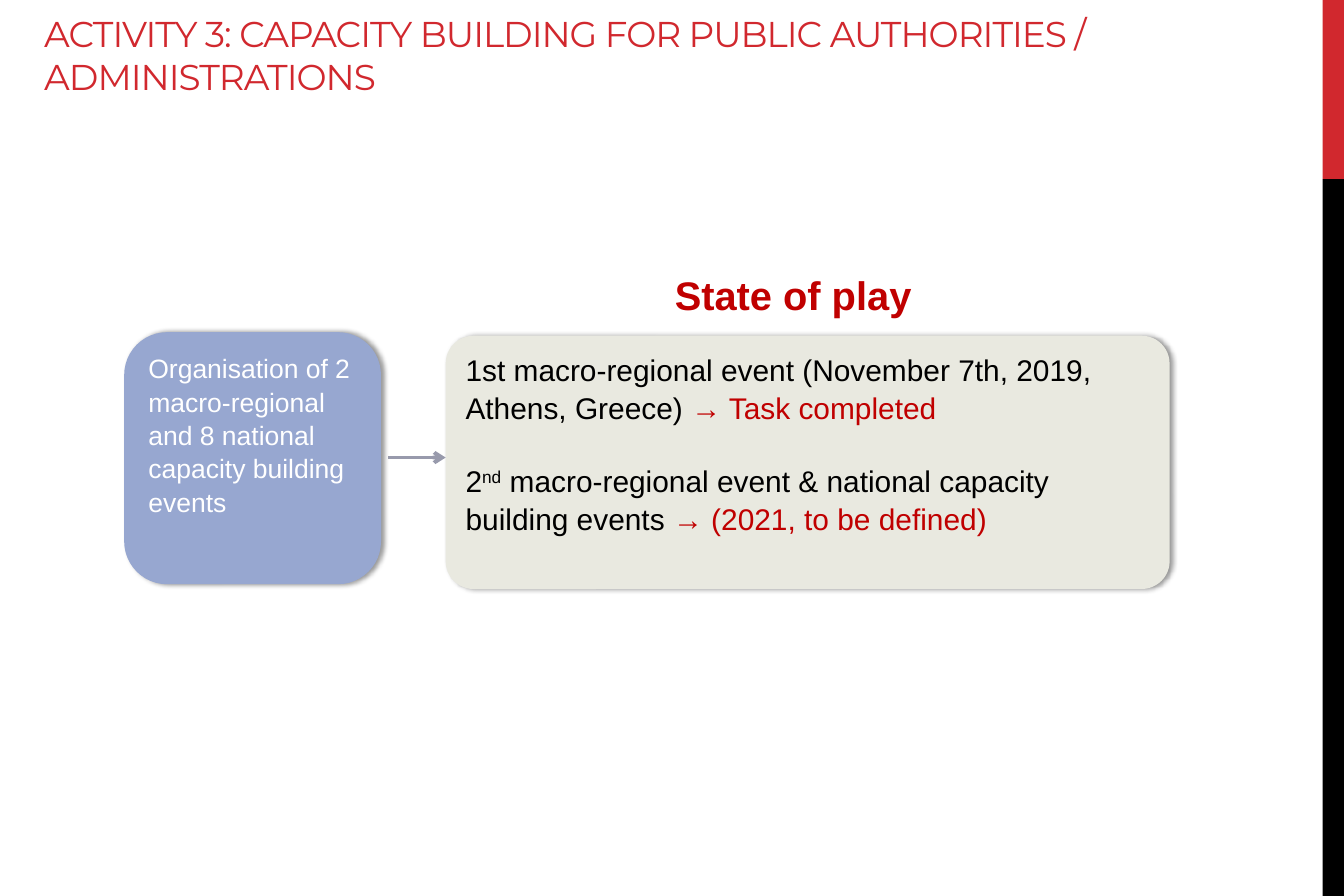
from dataclasses import dataclass

from lxml import etree
from pptx import Presentation
from pptx.dml.color import RGBColor
from pptx.enum.shapes import MSO_CONNECTOR, MSO_SHAPE
from pptx.enum.text import MSO_ANCHOR, MSO_AUTO_SIZE, PP_ALIGN
from pptx.oxml import parse_xml
from pptx.oxml.ns import nsdecls, qn
from pptx.util import Inches, Pt

RECTANGLE, ROUNDED = MSO_SHAPE.RECTANGLE, MSO_SHAPE.ROUNDED_RECTANGLE
STRAIGHT = MSO_CONNECTOR.STRAIGHT
LEFT, TOP, BOTTOM = PP_ALIGN.LEFT, MSO_ANCHOR.TOP, MSO_ANCHOR.BOTTOM
NO_FIT, GROW = MSO_AUTO_SIZE.NONE, MSO_AUTO_SIZE.SHAPE_TO_FIT_TEXT

WIDTH, HEIGHT = Inches(11.25), Inches(7.5)
COLORS = {
    "red": "D1282E",
    "dark red": "C00000",
    "black": "000000",
    "white": "FFFFFF",
    "blue": "97A7D0",
    "beige": "E9E9E0",
    "grey": "989AAC",
}


@dataclass
class Area:
    """A rectangle in percent of the slide's width and height."""
    left: float
    top: float
    width: float
    height: float

    def lengths(self) -> tuple[int, int, int, int]:
        return (across(self.left), down(self.top),
                across(self.width), down(self.height))


@dataclass
class Span:
    text: str
    color: str
    raised: bool = False


@dataclass
class Card:
    area: Area
    fill: str
    rounding: float
    size: float
    paragraphs: list[list[Span]]


@dataclass
class Band:
    area: Area
    fill: str


BANDS = [
    Band(Area(98.4, 0, 1.6, 20), "red"),
    Band(Area(98.4, 20, 1.6, 80), "black"),
]
CARDS = [
    Card(Area(9.24, 37.07, 19.11, 28.13), "blue", 0.17, 16, [
        [Span("Organisation of 2 macro-regional and 8 national "
              "capacity building events", "white")],
    ]),
    Card(Area(33.16, 37.47, 53.87, 28.27), "beige", 0.11, 18, [
        [Span("1st macro-regional event (November 7th, 2019, Athens, Greece) ",
              "black"),
         Span("→ Task completed", "dark red")],
        [Span("2", "black"),
         Span("nd", "black", raised=True),
         Span(" macro-regional event & national capacity building events ",
              "black"),
         Span("→ (2021, to be defined)", "dark red")],
    ]),
]


def across(percent: float) -> int:
    return round(WIDTH * percent / 100)


def down(percent: float) -> int:
    return round(HEIGHT * percent / 100)


def rgb(name: str) -> RGBColor:
    return RGBColor.from_string(COLORS[name])


def add_run(para, span: Span, size: float, font: str = "Arial"):
    run = para.add_run()
    run.text = span.text
    run.font.size = Pt(size)
    run.font.name = font
    run.font.color.rgb = rgb(span.color)
    if span.raised:
        run._r.get_or_add_rPr().set("baseline", "30000")
    return run


def add_filled(slide, kind, area: Area, fill: str):
    shape = slide.shapes.add_shape(kind, *area.lengths())
    shape.shadow.inherit = False
    shape.fill.solid()
    shape.fill.fore_color.rgb = rgb(fill)
    shape.line.fill.background()
    return shape


def add_soft_shadow(shape) -> None:
    effects = shape._element.spPr.find(qn("a:effectLst"))
    effects.append(parse_xml(
        f'<a:outerShdw {nsdecls("a")} blurRad="{Pt(3.1)}" dist="{Pt(1.8)}" '
        f'dir="0"><a:srgbClr val="{COLORS["black"]}"><a:alpha val="40000"/>'
        '</a:srgbClr></a:outerShdw>'))


def add_card(slide, card: Card) -> None:
    box = add_filled(slide, ROUNDED, card.area, card.fill)
    box.adjustments[0] = card.rounding
    add_soft_shadow(box)
    frame = box.text_frame
    frame.word_wrap = True
    frame.vertical_anchor = TOP
    for index, spans in enumerate(card.paragraphs):
        para = frame.add_paragraph() if index else frame.paragraphs[0]
        para.alignment = LEFT
        para.line_spacing = 1.05
        if index:
            para.space_before = Pt(card.size * 1.2)
        for span in spans:
            add_run(para, span, card.size)


def add_title(slide) -> None:
    title = slide.shapes.title
    title.left, title.top, title.width, title.height = Area(
        2.4, 1.73, 95.91, 9.87).lengths()
    frame = title.text_frame
    frame.auto_size = NO_FIT
    frame.word_wrap = True
    frame.vertical_anchor = BOTTOM
    para = frame.paragraphs[0]
    para.alignment = LEFT
    run = add_run(para, Span("ACTIVITY 3: CAPACITY BUILDING FOR PUBLIC "
                             "AUTHORITIES / ADMINISTRATIONS", "red"),
                  21.6, "Montserrat")
    run._r.get_or_add_rPr().set("spc", "-60")


def add_heading(slide) -> None:
    box = slide.shapes.add_textbox(*Area(49.33, 29.6, 19.56, 6.67).lengths())
    box.text_frame.word_wrap = False
    box.text_frame.auto_size = GROW
    run = add_run(box.text_frame.paragraphs[0],
                  Span("State of play", "dark red"), 24)
    run.font.bold = True


def add_arrow(slide, start: float, end: float, level: float) -> None:
    arrow = slide.shapes.add_connector(
        STRAIGHT, across(start), down(level), across(end), down(level))
    arrow.line.color.rgb = rgb("grey")
    arrow.line.width = Pt(2.25)
    properties = arrow._element.spPr
    etree.SubElement(properties.find(qn("a:ln")), qn("a:tailEnd"), type="arrow")
    etree.SubElement(properties, qn("a:effectLst"))


def main() -> None:
    deck = Presentation()
    deck.slide_width, deck.slide_height = WIDTH, HEIGHT
    slide = deck.slides.add_slide(deck.slide_layouts[5])
    for band in BANDS:
        add_filled(slide, RECTANGLE, band.area, band.fill)
    add_title(slide)
    for card in CARDS:
        add_card(slide, card)
    add_arrow(slide, 28.89, CARDS[1].area.left, 51.07)
    add_heading(slide)
    deck.save("out.pptx")


if __name__ == "__main__":
    main()
